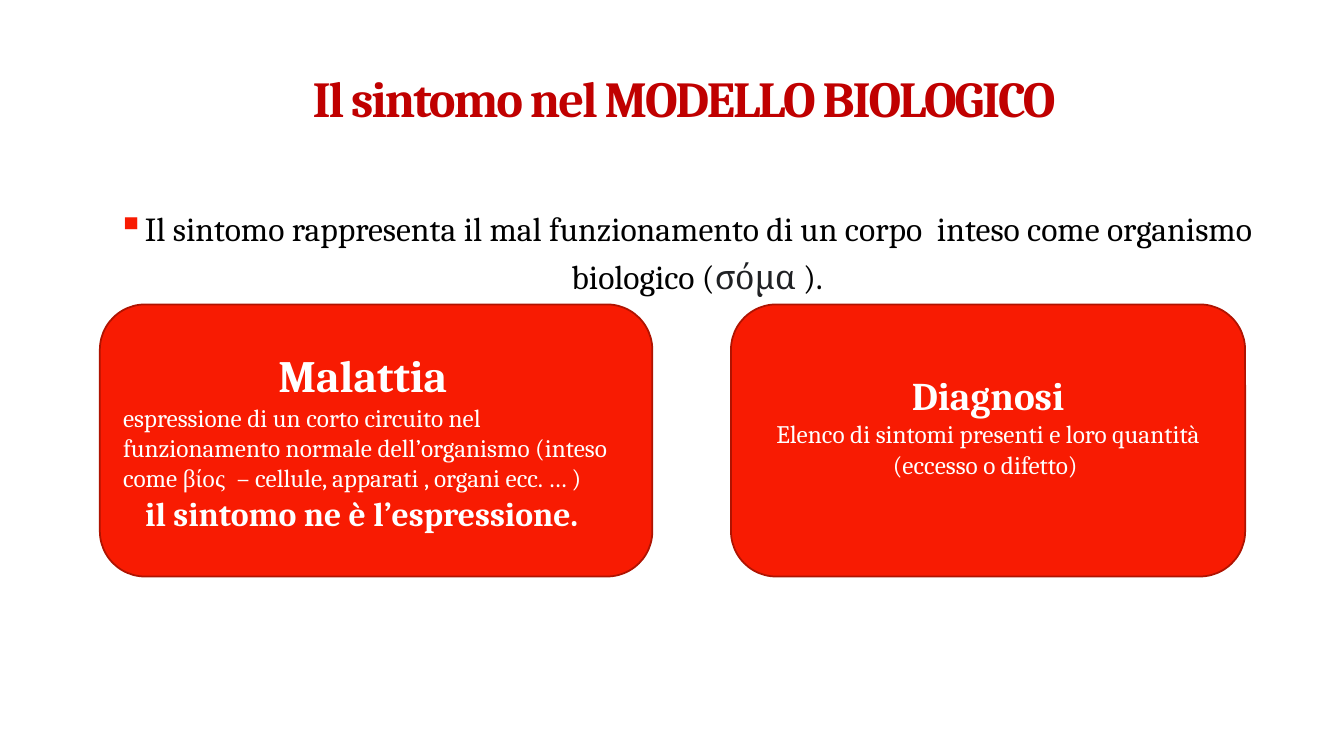
from dataclasses import dataclass

from lxml.etree import SubElement as Sub
from pptx import Presentation
from pptx.dml.color import RGBColor as Rgb
from pptx.enum.shapes import MSO_SHAPE as Shape
from pptx.enum.text import MSO_ANCHOR as Anchor, MSO_AUTO_SIZE as Fit, PP_ALIGN as Align
from pptx.oxml.ns import qn
from pptx.util import Inches, Pt


@dataclass(frozen=True)
class Theme:
    font: str = "Cambria"
    greek: str = "Times New Roman"
    title: str = "C00000"
    red: str = "F81B02"
    edge: str = "AF1301"
    ink: str = "000000"
    gray: str = "202124"
    white: str = "FFFFFF"
    head: int = 36
    lead: int = 24
    body: int = 18


T = Theme()

# Content: each run is (text, format)
TITLE = "Il sintomo nel MODELLO BIOLOGICO"
LEAD = [
    ("Il sintomo rappresenta il mal funzionamento di un corpo  inteso "
     "come organismo biologico (", {}),
    ("σόμα ", {"color": T.gray}),
    (").", {}),
]
# Card: left, width, bottom inset, alignment, paragraphs of (indent, runs)
CARDS = [
    (0.99, 5.48, 0.05, Align.LEFT, [
        (1.54, [("Malattia", {"size": 32, "bold": True})]),
        (0, [("espressione di un corto circuito nel funzionamento normale "
              "dell’organismo (inteso come ", {}),
             ("βίος\u00a0", {"font": T.greek}),
             (" – cellule, apparati , organi ecc. … )", {})]),
        (0.22, [("il sintomo ne è l’espressione.",
                 {"size": T.lead, "bold": True})]),
    ]),
    (7.25, 5.1, 0.35, Align.CENTER, [
        (0, [("Diagnosi", {"size": 28, "bold": True})]),
        (0, [("Elenco di sintomi presenti e loro quantità "
              "(eccesso o difetto) ", {})]),
    ]),
]
TOP, HIGH = 3.02, 2.7


def write(para, text, size=T.body, color=T.white, bold=False, font=T.font):
    run = para.add_run()
    run.text = text
    face = run.font
    face.name, face.size, face.bold = font, Pt(size), bold
    face.color.rgb = Rgb.from_string(color)
    return run


def place(shape, left, top, width, height):
    shape.left, shape.top = Inches(left), Inches(top)
    shape.width, shape.height = Inches(width), Inches(height)


def indent(para, left, first=0):
    props = para._p.get_or_add_pPr()
    props.set("marL", str(Inches(left)))
    props.set("indent", str(Inches(first)))
    return props


deck = Presentation()
deck.slide_width, deck.slide_height = Inches(13.33), Inches(7.5)
slide = deck.slides.add_slide(deck.slide_layouts[5])

# Title
title = slide.shapes.title
place(title, 1.91, 0.5, 9.75, 1.03)
frame = title.text_frame
frame.auto_size, frame.word_wrap = Fit.NONE, True
frame.vertical_anchor = Anchor.MIDDLE
frame.margin_left = frame.margin_right = Inches(0.25)
frame.margin_top = frame.margin_bottom = Inches(0.25)
para = frame.paragraphs[0]
para.alignment, para.line_spacing = Align.CENTER, 0.85
run = write(para, TITLE, size=T.head, color=T.title, bold=True)
run.font._element.set("spc", "-150")

# Lead sentence with a square bullet
box = slide.shapes.add_textbox(*map(Inches, (0.99, 1.93, 11.6, 1.09)))
frame = box.text_frame
frame.word_wrap = True
para = frame.paragraphs[0]
para.alignment, para.line_spacing = Align.CENTER, 1.2
para.space_before = Pt(10)
props = indent(para, 0.25, -0.25)
Sub(Sub(props, qn("a:buClr")), qn("a:srgbClr"), val=T.red)
Sub(props, qn("a:buSzPct"), val="110000")
Sub(props, qn("a:buChar"), char="▪")
for text, look in LEAD:
    write(para, text, **{"size": T.lead, "color": T.ink, **look})

# Red cards
for left, width, foot, align, paras in CARDS:
    card = slide.shapes.add_shape(
        Shape.ROUNDED_RECTANGLE, *map(Inches, (left, TOP, width, HIGH)))
    card.shadow.inherit = False
    card.fill.solid()
    card.fill.fore_color.rgb = Rgb.from_string(T.red)
    card.line.color.rgb = Rgb.from_string(T.edge)
    card.line.width = Pt(1.25)
    frame = card.text_frame
    frame.word_wrap, frame.vertical_anchor = True, Anchor.MIDDLE
    frame.margin_bottom = Inches(foot)
    for i, (inset, runs) in enumerate(paras):
        para = frame.add_paragraph() if i else frame.paragraphs[0]
        para.alignment = align
        indent(para, inset)
        for text, look in runs:
            write(para, text, **look)

deck.save("out.pptx")
